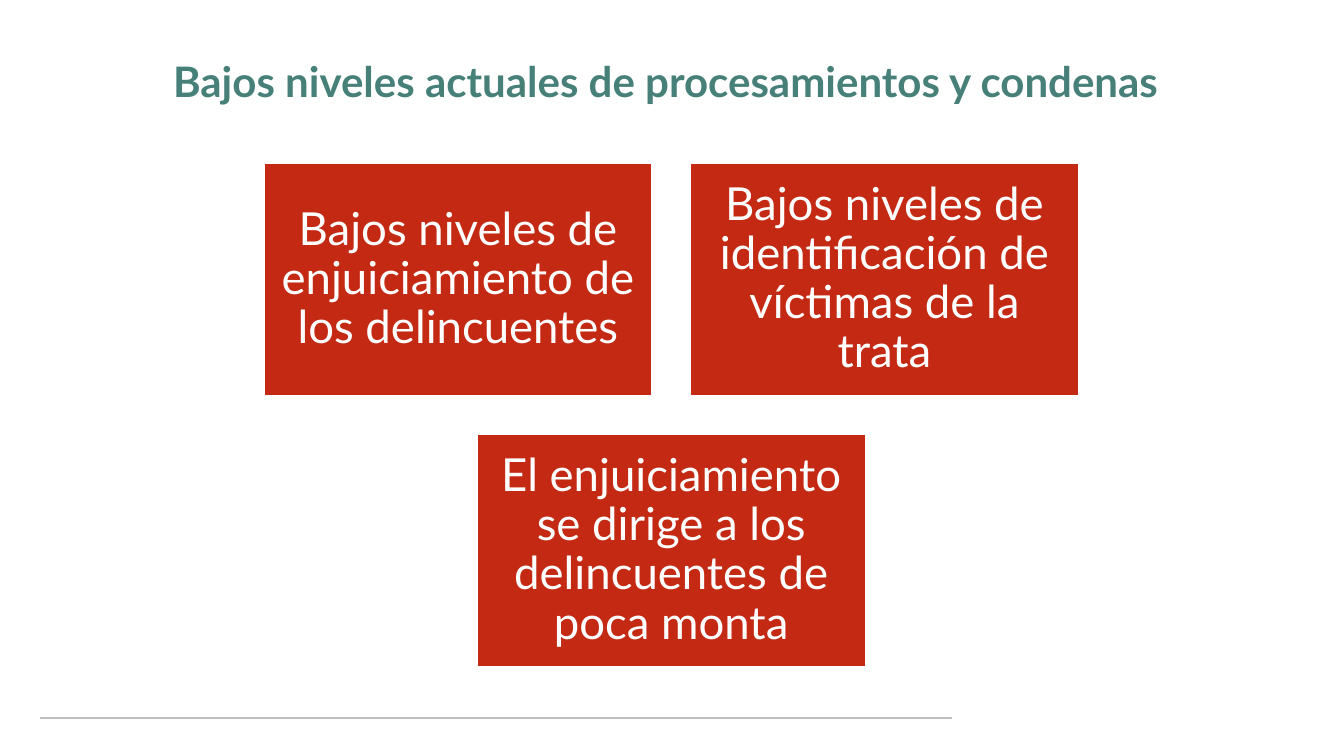
from lxml.etree import SubElement
from pptx import Presentation
from pptx.dml.color import RGBColor
from pptx.enum.shapes import MSO_CONNECTOR, MSO_SHAPE
from pptx.enum.text import MSO_ANCHOR, PP_ALIGN
from pptx.oxml.ns import qn
from pptx.util import Inches, Pt

TEAL = RGBColor(0x46, 0x80, 0x78)
RED = RGBColor(0xC4, 0x2A, 0x13)
WHITE = RGBColor(0xFF, 0xFF, 0xFF)
GREY = RGBColor(0xBF, 0xBF, 0xBF)


def write(shape, text, size, color, bold=False, side=0.27, edge=0.27):
    frame = shape.text_frame
    frame.word_wrap = True
    frame.vertical_anchor = MSO_ANCHOR.MIDDLE
    frame.margin_left = frame.margin_right = Inches(side)
    frame.margin_top = frame.margin_bottom = Inches(edge)
    para = frame.paragraphs[0]
    para.alignment = PP_ALIGN.CENTER
    para.line_spacing = 0.9
    run = para.add_run()
    run.text = text
    run.font.name = "Lato"
    run.font.size = Pt(size)
    run.font.bold = bold
    run.font.color.rgb = color


deck = Presentation()
deck.slide_width = Inches(26.66)
deck.slide_height = Inches(15)
slide = deck.slides.add_slide(deck.slide_layouts[6])
shapes = slide.shapes

rule = shapes.add_connector(
    MSO_CONNECTOR.STRAIGHT, Inches(0.8), Inches(14.25), Inches(18.88), Inches(14.25)
)
rule.line.color.rgb = GREY
rule.line.width = Pt(2.25)
SubElement(rule._element.spPr, qn("a:effectLst"))

title = shapes.add_textbox(Inches(0.8), Inches(0.55), Inches(25.01), Inches(2.22))
write(
    title,
    "Bajos niveles actuales de procesamientos y condenas ",
    size=60,
    color=TEAL,
    bold=True,
    side=0.2,
    edge=0.1,
)

wide, high, gap = 7.69, 4.61, 0.77
left, top = 5.24, 3.24
rows = [
    [
        "Bajos niveles de enjuiciamiento de los delincuentes",
        "Bajos niveles de identificación de víctimas de la trata",
    ],
    ["El enjuiciamiento se dirige a los delincuentes de poca monta"],
]
for row, texts in enumerate(rows):
    start = left + (2 - len(texts)) * (wide + gap) / 2
    for col, text in enumerate(texts):
        card = shapes.add_shape(
            MSO_SHAPE.RECTANGLE,
            Inches(start + col * (wide + gap)),
            Inches(top + row * (high + gap)),
            Inches(wide),
            Inches(high),
        )
        card.shadow.inherit = False
        card.fill.solid()
        card.fill.fore_color.rgb = RED
        card.line.color.rgb = WHITE
        card.line.width = Pt(1)
        write(card, text, size=65, color=WHITE)

deck.save("out.pptx")
